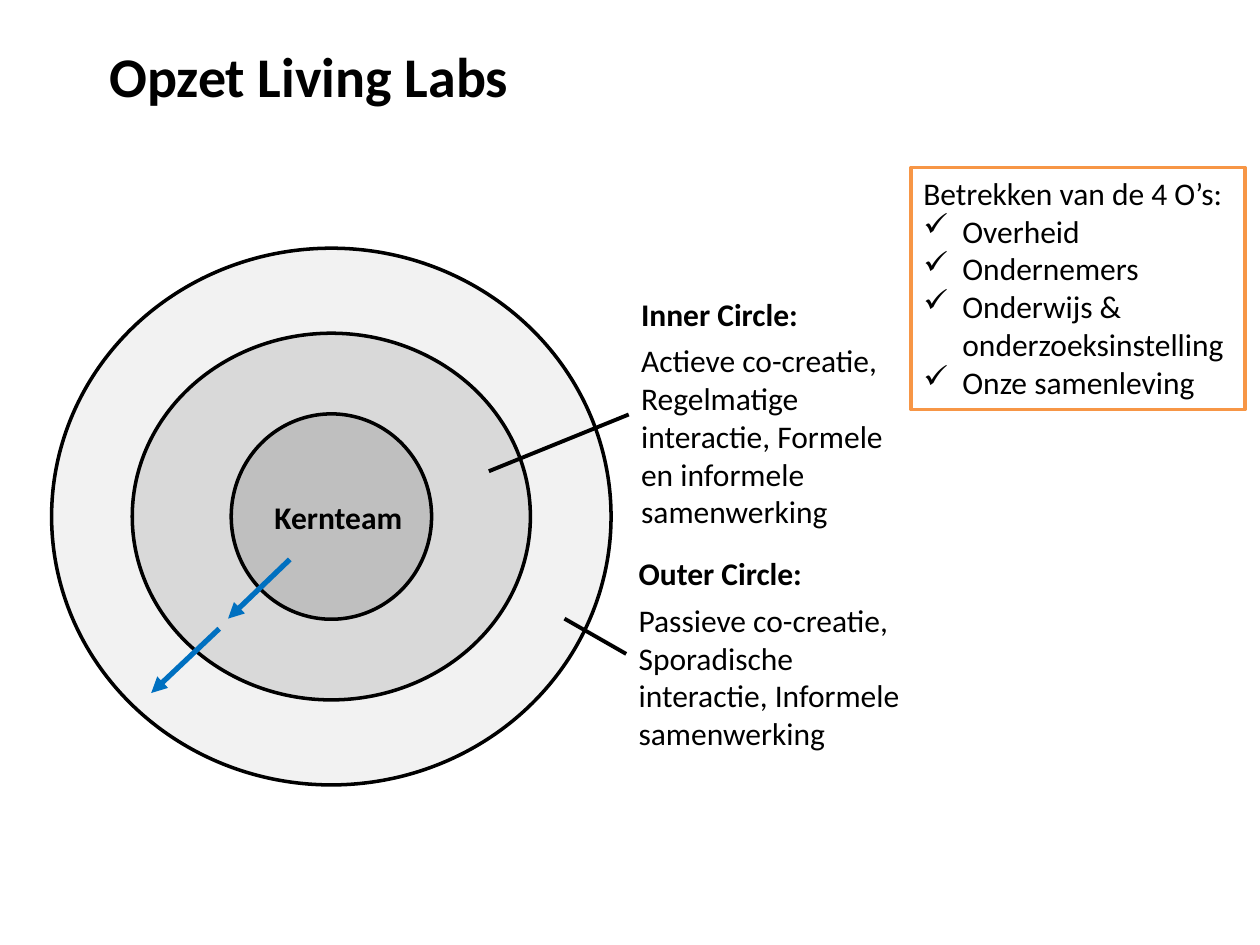
from dataclasses import dataclass

from lxml import etree
from pptx import Presentation
from pptx.dml.color import RGBColor
from pptx.enum.shapes import MSO_CONNECTOR, MSO_SHAPE
from pptx.enum.text import MSO_ANCHOR, PP_ALIGN
from pptx.oxml.ns import qn
from pptx.util import Inches, Pt


@dataclass(frozen=True)
class Theme:
    font: str = "Calibri"
    title_size: int = 32
    body_size: int = 18
    black: str = "000000"
    white: str = "FFFFFF"
    outer: str = "F2F2F2"
    inner: str = "D9D9D9"
    core: str = "BFBFBF"
    arrow: str = "0070C0"
    accent: str = "F79646"


theme = Theme()


def write(text_frame, lines, bold_first=False, size=theme.body_size, space=0):
    """Fill a text frame with one left-aligned paragraph per line."""
    text_frame.word_wrap = True
    for index, line in enumerate(lines):
        paragraph = text_frame.paragraphs[0] if index == 0 else text_frame.add_paragraph()
        paragraph.text = line
        paragraph.alignment = PP_ALIGN.LEFT
        paragraph.space_before = Pt(space if index else 0)
        paragraph.font.name = theme.font
        paragraph.font.size = Pt(size)
        paragraph.font.bold = bold_first and index == 0
        paragraph.font.color.rgb = RGBColor.from_string(theme.black)


def add_outlined(kind, box, fill, line):
    shape = slide.shapes.add_shape(kind, *map(Inches, box))
    shape.shadow.inherit = False
    shape.fill.solid()
    shape.fill.fore_color.rgb = RGBColor.from_string(fill)
    shape.line.color.rgb = RGBColor.from_string(line)
    shape.line.width = Pt(2)
    return shape


presentation = Presentation()
presentation.slide_width = Inches(10)
presentation.slide_height = Inches(7.5)
slide = presentation.slides.add_slide(presentation.slide_layouts[5])

title = slide.shapes.title
title.left, title.top, title.width, title.height = map(Inches, (0.77, 0.26, 8.46, 0.67))
title.text_frame.vertical_anchor = MSO_ANCHOR.MIDDLE
write(title.text_frame, ["Opzet Living Labs"], bold_first=True, size=theme.title_size)

# Concentric circles, from the outside in
center_x, center_y = 2.63, 4.1
for width, height, fill in [
    (4.44, 4.26, theme.outer),
    (3.16, 2.91, theme.inner),
    (1.59, 1.63, theme.core),
]:
    box = (center_x - width / 2, center_y - height / 2, width, height)
    add_outlined(MSO_SHAPE.OVAL, box, fill, theme.black)

# Circle labels
for box, lines in [
    ((2.08, 3.9, 1.34, 0.4), ["Kernteam"]),
    ((4.99, 2.29, 2.24, 1.99), [
        "Inner Circle:",
        "Actieve co-creatie, Regelmatige interactie, Formele en informele samenwerking",
    ]),
    ((4.97, 4.35, 2.34, 1.69), [
        "Outer Circle:",
        "Passieve co-creatie, Sporadische interactie, Informele samenwerking",
    ]),
]:
    label = slide.shapes.add_textbox(*map(Inches, box))
    write(label.text_frame, lines, bold_first=True, space=5)

# Leader lines and outward arrows
for ends, color, width, has_head in [
    ((4.99, 3.29, 3.88, 3.74), theme.black, 2.25, False),
    ((4.97, 5.19, 4.48, 4.91), theme.black, 2.25, False),
    ((2.3, 4.44, 1.81, 4.91), theme.arrow, 3, True),
    ((1.74, 4.99, 1.2, 5.5), theme.arrow, 3, True),
]:
    connector = slide.shapes.add_connector(MSO_CONNECTOR.STRAIGHT, *map(Inches, ends))
    connector.line.color.rgb = RGBColor.from_string(color)
    connector.line.width = Pt(width)
    if has_head:
        etree.SubElement(connector.line._get_or_add_ln(), qn("a:tailEnd"), type="triangle")
    etree.SubElement(connector._element.spPr, qn("a:effectLst"))

# Checklist of the four parties
checklist = add_outlined(MSO_SHAPE.RECTANGLE, (7.23, 1.33, 2.65, 1.92), theme.white, theme.accent)
checklist.text_frame.vertical_anchor = MSO_ANCHOR.TOP
write(checklist.text_frame, [
    "Betrekken van de 4 O’s:",
    "Overheid",
    "Ondernemers",
    "Onderwijs & onderzoeksinstelling",
    "Onze samenleving",
])
for paragraph in checklist.text_frame.paragraphs[1:]:
    properties = paragraph._p.get_or_add_pPr()
    properties.set("marL", str(Inches(0.31)))
    properties.set("indent", str(-Inches(0.31)))
    bullet = etree.Element(qn("a:buChar"), char="✓")
    properties.find(qn("a:defRPr")).addprevious(bullet)

presentation.save("out.pptx")
